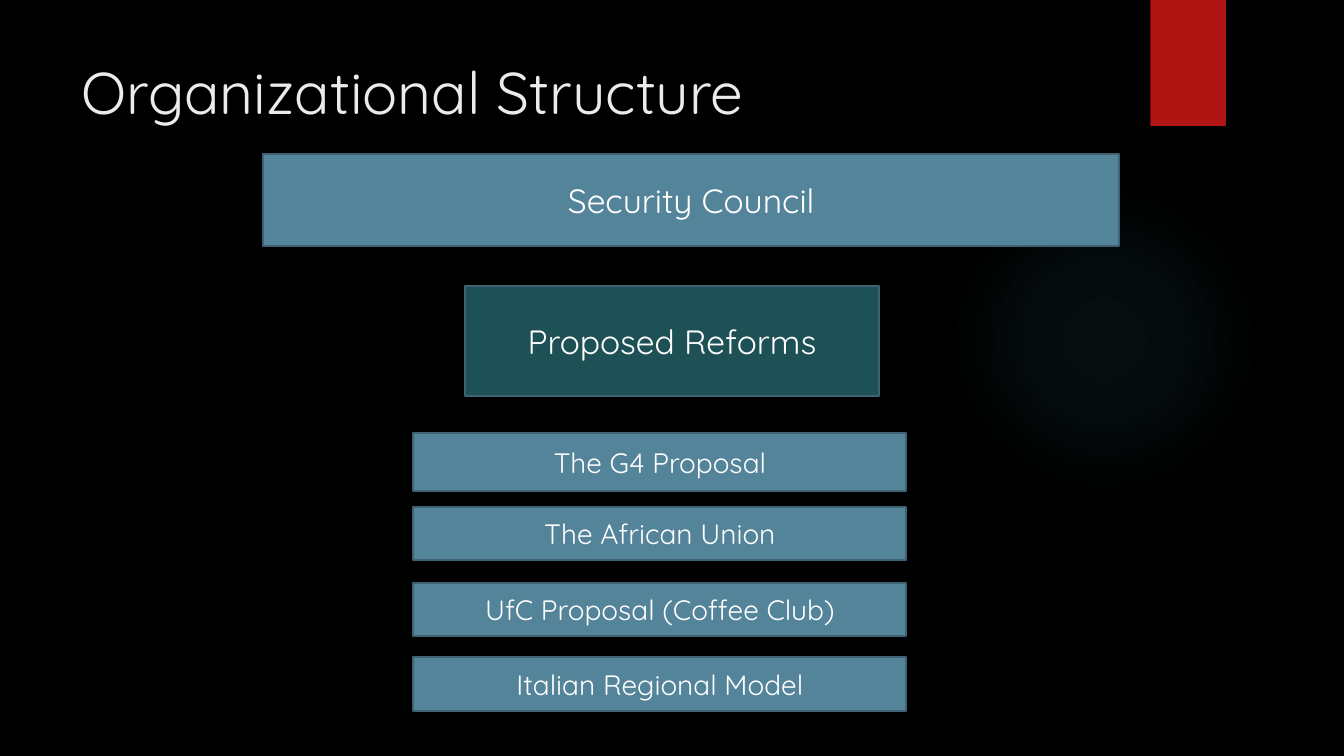
from pptx import Presentation
from pptx.dml.color import RGBColor
from pptx.enum.shapes import MSO_SHAPE as SHAPE
from pptx.enum.text import MSO_ANCHOR as ANCHOR, PP_ALIGN as ALIGN
from pptx.oxml import parse_xml
from pptx.oxml.ns import nsdecls, qn
from pptx.util import Pt

PX = 9144  # 100 px to the inch
FONT = "Quicksand"
COLORS = {
    "background": "000000",
    "glow": "50B9C1",
    "ribbon": "B01513",
    "title": "EBEBEB",
    "blue": "54849A",
    "teal": "1E5155",
    "border": "3E6272",
    "label": "FFFFFF",
}
PROPOSALS = [
    ("The G4 Proposal", 430, 57),
    ("The African Union", 503, 53),
    ("UfC Proposal (Coffee Club)", 578, 53),
    ("Italian Regional Model", 652, 53),
]


def rgb(name):
    return RGBColor.from_string(COLORS[name])


def px(*lengths):
    return [n * PX for n in lengths]


def write(tf, text, size, color, align, anchor):
    tf.word_wrap = True
    tf.vertical_anchor = anchor
    p = tf.paragraphs[0]
    p.text = text
    p.alignment = align
    p.font.name = FONT
    p.font.size = Pt(size)
    p.font.color.rgb = rgb(color)


def add_plain_shape(slide, kind, box, fill):
    sp = slide.shapes.add_shape(kind, *px(*box))
    sp.shadow.inherit = False
    sp.fill.solid()
    sp.fill.fore_color.rgb = rgb(fill)
    sp.line.fill.background()
    return sp


def add_glow(slide, box):
    """Add a circle whose faint colour fades out from its centre."""
    sp = add_plain_shape(slide, SHAPE.OVAL, box, "glow")
    stops = "".join(
        f'<a:gs pos="{pos * 1000}"><a:srgbClr val="{COLORS["glow"]}">'
        f'<a:alpha val="{alpha * 1000}"/></a:srgbClr></a:gs>'
        for pos, alpha in [(0, 7), (36, 6), (69, 0)]
    )
    gradient = parse_xml(
        f'<a:gradFill {nsdecls("a")}><a:gsLst>{stops}</a:gsLst><a:path path="circle">'
        '<a:fillToRect l="50000" t="50000" r="50000" b="50000"/></a:path></a:gradFill>'
    )
    spPr = sp.fill._xPr
    spPr.replace(spPr.find(qn("a:solidFill")), gradient)


def add_ribbon(slide, box):
    """Add the red tab with a soft shadow below it."""
    sp = add_plain_shape(slide, SHAPE.RECTANGLE, box, "ribbon")
    effects = sp.fill._xPr.find(qn("a:effectLst"))
    effects.append(parse_xml(
        f'<a:outerShdw {nsdecls("a")} blurRad="{Pt(3)}" dist="{Pt(2)}" dir="5400000">'
        '<a:srgbClr val="000000"><a:alpha val="45000"/></a:srgbClr></a:outerShdw>'
    ))


def add_title(slide, box, text):
    tb = slide.shapes.add_textbox(*px(*box))
    write(tb.text_frame, text, 42, "title", ALIGN.LEFT, ANCHOR.TOP)


def add_label_box(slide, box, text, size, fill):
    sp = add_plain_shape(slide, SHAPE.RECTANGLE, box, fill)
    sp.line.color.rgb = rgb("border")
    sp.line.width = Pt(1.5)
    write(sp.text_frame, text, size, "label", ALIGN.CENTER, ANCHOR.MIDDLE)


def main():
    prs = Presentation()
    prs.slide_width, prs.slide_height = px(1333, 750)
    slide = prs.slides.add_slide(prs.slide_layouts[6])
    slide.background.fill.solid()
    slide.background.fill.fore_color.rgb = rgb("background")

    add_glow(slide, (941, 183, 308, 308))
    add_ribbon(slide, (1141, 0, 75, 125))
    add_title(slide, (71, 50, 1029, 153), "Organizational Structure")
    add_label_box(slide, (261, 153, 849, 91), "Security Council", 24, "blue")
    add_label_box(slide, (461, 284, 411, 109), "Proposed Reforms", 24, "teal")
    for text, top, height in PROPOSALS:
        add_label_box(slide, (410, top, 489, height), text, 20, "blue")

    prs.save("out.pptx")


if __name__ == "__main__":
    main()
